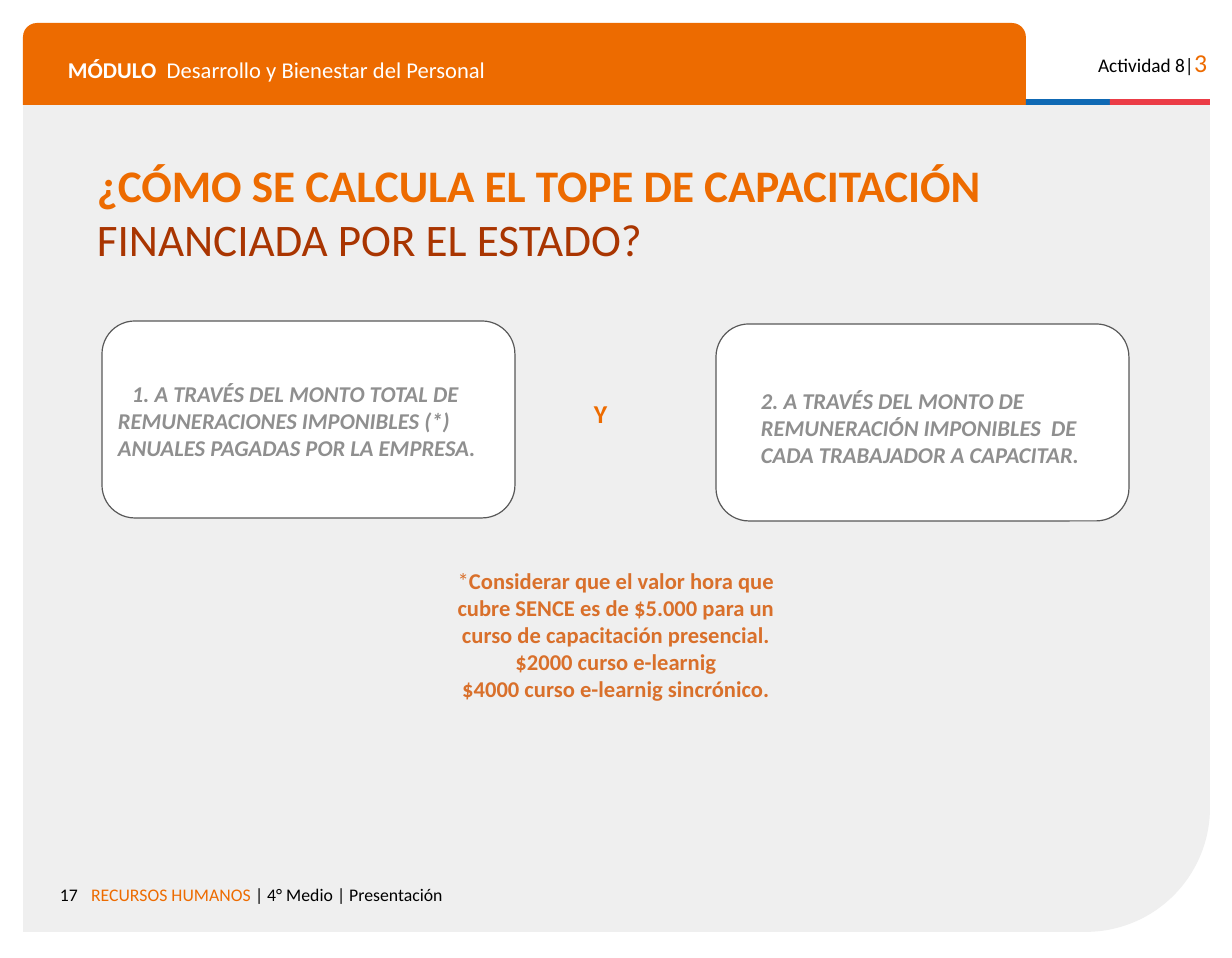
from pptx import Presentation
from pptx.dml.color import RGBColor
from pptx.enum.shapes import MSO_SHAPE
from pptx.enum.text import PP_ALIGN
from pptx.util import Emu, Pt

RECT = MSO_SHAPE.RECTANGLE
ROUND = MSO_SHAPE.ROUNDED_RECTANGLE
TOP_ROUND = MSO_SHAPE.ROUND_2_SAME_RECTANGLE
ONE_ROUND = MSO_SHAPE.ROUND_1_RECTANGLE
LEFT, RIGHT, CENTER = PP_ALIGN.LEFT, PP_ALIGN.RIGHT, PP_ALIGN.CENTER

SCALE = 914400 / 116
FONT = "Calibri"
COLORS = {
    "panel": "EFEFEF",
    "orange": "ED6B00",
    "rust": "A93501",
    "amber": "D9702B",
    "blue": "0F69B4",
    "red": "EB3C46",
    "white": "FFFFFF",
    "black": "000000",
    "gray": "8F8F8F",
    "edge": "585858",
}


def px(n):
    return Emu(round(n * SCALE))


def color(name):
    return RGBColor.from_string(COLORS[name])


def add_block(slide, kind, box, fill, curve=None, edge=None):
    block = slide.shapes.add_shape(kind, *map(px, box))
    block.shadow.inherit = False
    block.fill.solid()
    block.fill.fore_color.rgb = color(fill)
    if curve is not None:
        block.adjustments[0] = curve
    if edge:
        block.line.color.rgb = color(edge)
        block.line.width = Pt(0.75)
    else:
        block.line.fill.background()
    return block


def add_text(slide, box, paras, size, tone, pad=6, align=LEFT,
             bold=False, italic=False, indent=0):
    """Each paragraph is a list of (text, font changes) runs."""
    frame = slide.shapes.add_textbox(*map(px, box)).text_frame
    frame.word_wrap = True
    frame.margin_left = frame.margin_right = px(pad)
    frame.margin_top = frame.margin_bottom = px(pad)
    for i, runs in enumerate(paras):
        para = frame.add_paragraph() if i else frame.paragraphs[0]
        para.alignment = align
        if indent:
            props = para._p.get_or_add_pPr()
            props.set("marL", "0")
            props.set("indent", str(px(indent)))
        font = para.font
        font.name, font.size = FONT, Pt(size)
        font.bold, font.italic = bold, italic
        font.color.rgb = color(tone)
        for text, changes in runs:
            run = para.add_run()
            run.text = text
            if "tone" in changes:
                run.font.color.rgb = color(changes["tone"])
            if "bold" in changes:
                run.font.bold = changes["bold"]
            if "size" in changes:
                run.font.size = Pt(changes["size"])


def add_card(slide, left, top, box, lines, indent=0):
    add_block(slide, ROUND, (left, top, 413, 197), "white", 0.167, "edge")
    add_text(slide, box, [[(line, {})] for line in lines], 14, "gray",
             bold=True, italic=True, indent=indent)


def add_frame(slide):
    panel = add_block(slide, ONE_ROUND, (23, 104, 1187, 828), "panel", 0.15)
    panel._element.spPr.xfrm.set("flipV", "1")
    add_block(slide, TOP_ROUND, (23, 23, 1003, 82), "orange", 0.17)
    add_block(slide, RECT, (1026, 99, 84, 6), "blue")
    add_block(slide, RECT, (1110, 99, 100, 6), "red")
    add_text(slide, (56, 44, 944, 48), [[
        ("MÓDULO", {"bold": True}),
        ("  Desarrollo y Bienestar del Personal", {}),
    ]], 14, "white", pad=12)
    add_text(slide, (1071, 35, 148, 50), [[
        ("Actividad 8|", {}),
        ("3", {"size": 16, "tone": "orange"}),
    ]], 12, "black", pad=12, align=RIGHT)
    add_text(slide, (48, 873, 861, 41), [[
        ("RECURSOS HUMANOS ", {"tone": "orange"}),
        ("| 4° Medio | Presentación", {}),
    ]], 11, "black", pad=12, indent=31)
    add_text(slide, (47, 873, 43, 41), [[("17", {})]], 11, "black",
             pad=12, align=RIGHT)


def main():
    deck = Presentation()
    deck.slide_width, deck.slide_height = px(1232), px(958)
    slide = deck.slides.add_slide(deck.slide_layouts[6])
    add_frame(slide)
    add_text(slide, (91, 151, 930, 111), [[
        ("¿CÓMO SE CALCULA EL TOPE DE CAPACITACIÓN ", {"bold": True}),
        ("FINANCIADA POR EL ESTADO?", {"tone": "rust"}),
    ]], 28, "orange")
    add_card(slide, 102, 321, (112, 374, 392, 94), [
        "1. A TRAVÉS DEL MONTO TOTAL DE REMUNERACIONES IMPONIBLES (*) "
        "ANUALES PAGADAS POR LA EMPRESA.",
    ], indent=14)
    add_card(slide, 716, 324, (755, 381, 335, 94), [
        "2. A TRAVÉS DEL MONTO DE REMUNERACIÓN IMPONIBLES  DE",
        "CADA TRABAJADOR A CAPACITAR.",
    ])
    add_text(slide, (588, 392, 27, 38), [[("Y", {})]], 16, "orange", bold=True)
    add_text(slide, (451, 561, 330, 152), [
        [("*", {"bold": False}),
         ("Considerar que el valor hora que cubre SENCE es de $5.000 "
          "para un curso de capacitación presencial.", {})],
        [("$2000 curso e-learnig", {})],
        [("$4000 curso e-learnig sincrónico.", {})],
    ], 14, "amber", align=CENTER, bold=True)
    deck.save("out.pptx")


if __name__ == "__main__":
    main()
